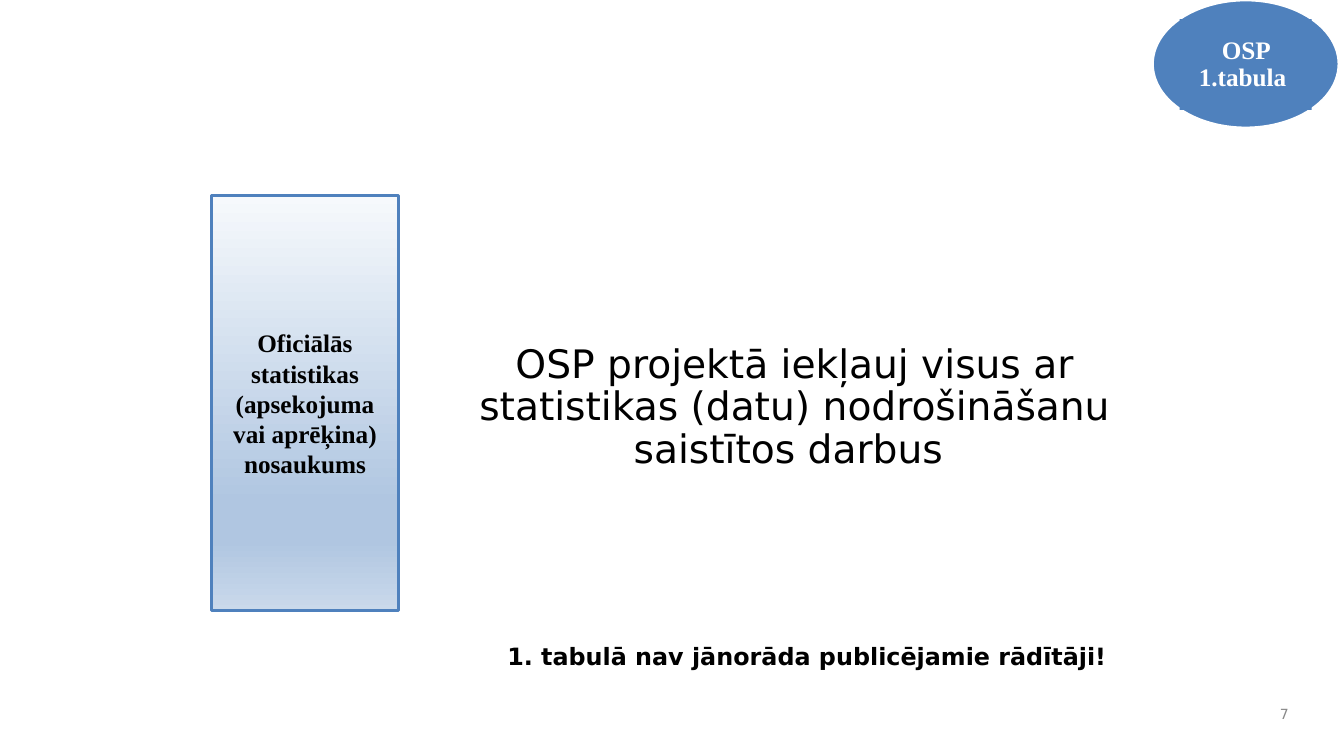
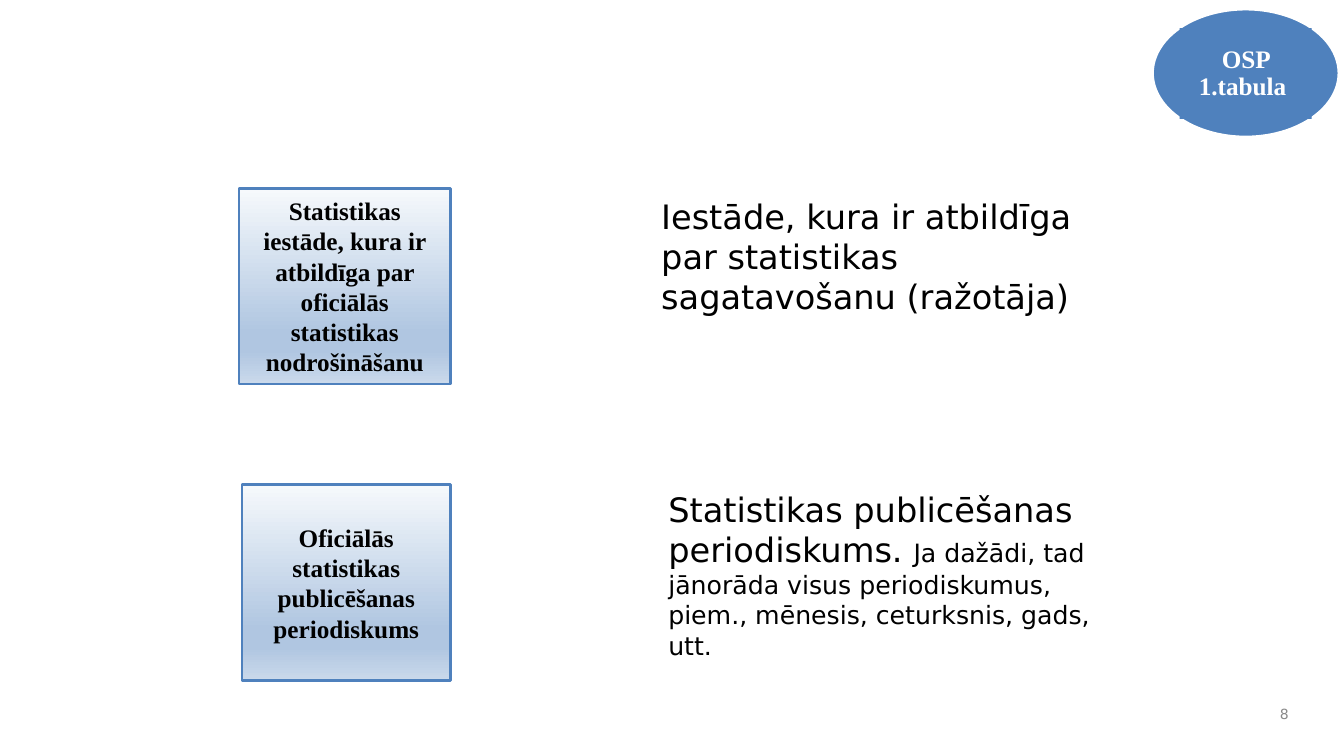
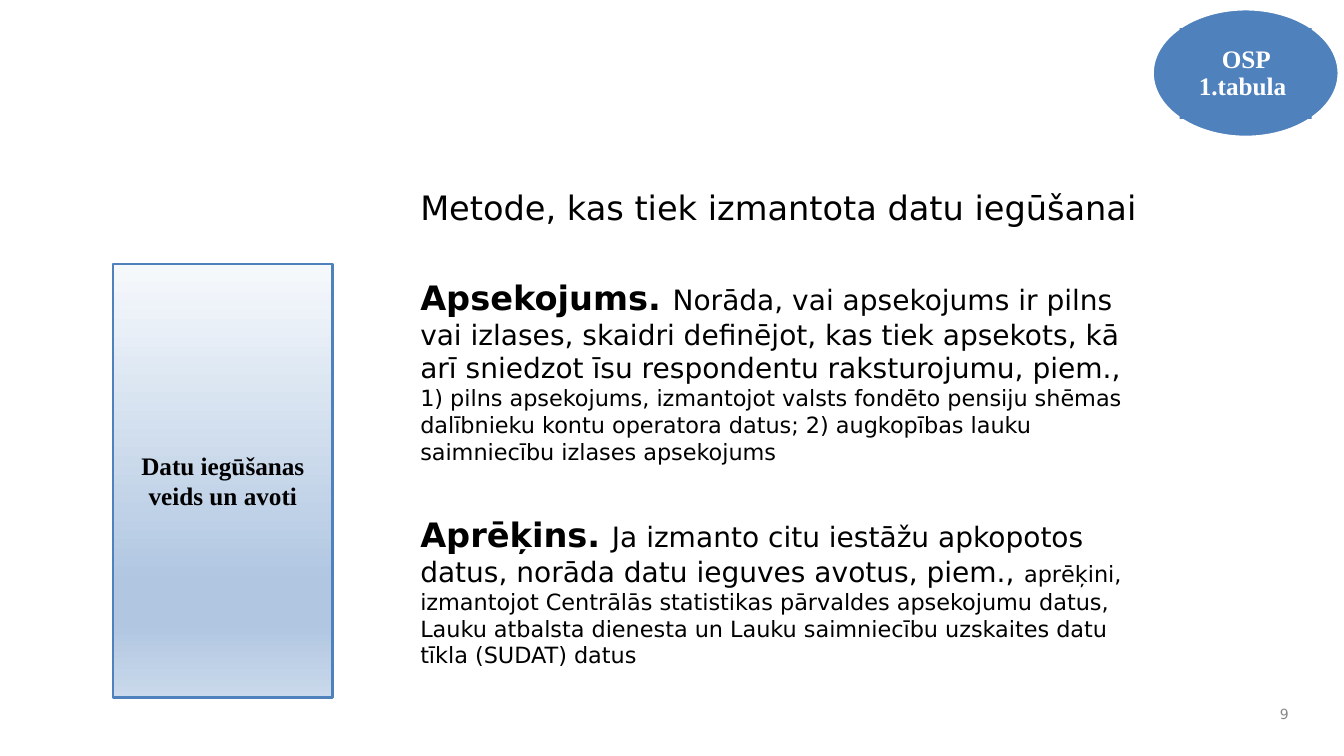
from dataclasses import dataclass

from lxml.etree import SubElement
from pptx import Presentation
from pptx.dml.color import RGBColor
from pptx.enum.shapes import MSO_SHAPE as Shape
from pptx.enum.text import MSO_ANCHOR as Anchor, PP_ALIGN as Align
from pptx.oxml.ns import qn
from pptx.util import Inches, Pt

# Shared look
BODY_FONT, LABEL_FONT = "DejaVu Sans", "Times New Roman"
BLACK, WHITE, GREY, BLUE = "000000", "FFFFFF", "898989", "4F81BD"
PANEL_STOPS = [(0, "F6F9FC"), (74, "B0C6E1"), (83, "B0C6E1"), (100, "CAD9EB")]
BADGE_TEXT = "OSP 1.tabula "


@dataclass
class Area:
    left: float
    top: float
    width: float
    height: float

    def lengths(self):
        return [Inches(n) for n in (self.left, self.top, self.width, self.height)]


@dataclass
class Span:
    text: str
    size: float
    bold: bool = False


@dataclass
class Para:
    spans: list[Span]
    space_before: float = 0


@dataclass
class Panel:
    area: Area
    label: str


@dataclass
class Note:
    area: Area
    paras: list[Para]
    align: Align = Align.LEFT
    line_spacing: float = 1.0


@dataclass
class Page:
    number: int
    badge_top: float
    panels: list[Panel]
    notes: list[Note]


PAGES = [
    Page(7, 0, [
        Panel(Area(2.1, 1.94, 1.85, 4.12),
              "Oficiālās statistikas (apsekojuma vai aprēķina) nosaukums"),
    ], [
        Note(Area(4.06, 3.37, 7.64, 2.82), [Para([
            Span("OSP projektā iekļauj visus ar statistikas (datu) "
                 "nodrošināšanu saistītos darbus ", 28)])], Align.CENTER, 0.9),
        Note(Area(4.67, 6.35, 6.67, 0.36), [Para([
            Span("1. tabulā nav jānorāda publicējamie rādītāji!", 17, True)])],
            Align.CENTER, 0.9),
    ]),
    Page(8, 0.09, [
        Panel(Area(2.37, 1.87, 2.1, 1.94),
              "Statistikas iestāde, kura ir atbildīga par oficiālās "
              "statistikas nodrošināšanu"),
        Panel(Area(2.4, 4.81, 2.07, 1.94),
              "Oficiālās statistikas publicēšanas periodiskums"),
    ], [
        Note(Area(6.46, 1.89, 4.36, 1.91), [Para([
            Span("Iestāde, kura ir atbildīga par statistikas "
                 "sagatavošanu (ražotāja)", 24)])]),
        Note(Area(6.53, 4.8, 4.6, 1.91), [Para([
            Span("Statistikas publicēšanas periodiskums. ", 24),
            Span("Ja dažādi, tad jānorāda visus periodiskumus, piem., "
                 "mēnesis, ceturksnis, gads, utt.", 18)])]),
    ]),
    Page(9, 0.09, [
        Panel(Area(1.12, 2.62, 2.18, 4.3), "Datu iegūšanas veids un avoti"),
    ], [
        Note(Area(4.07, 1.81, 7.46, 5.13), [
            Para([Span("Metode, kas tiek izmantota datu iegūšanai", 24)]),
            Para([
                Span("Apsekojums. ", 24, True),
                Span("Norāda, vai apsekojums ir pilns vai izlases, skaidri "
                     "definējot, kas tiek apsekots, kā arī sniedzot īsu "
                     "respondentu raksturojumu, piem., ", 20),
                Span("1) pilns apsekojums, izmantojot valsts fondēto pensiju "
                     "shēmas dalībnieku kontu operatora datus; 2) augkopības "
                     "lauku saimniecību izlases apsekojums", 16)], 35),
            Para([
                Span("Aprēķins. ", 24, True),
                Span("Ja izmanto citu iestāžu apkopotos datus, norāda datu "
                     "ieguves avotus, piem., ", 20),
                Span("aprēķini, izmantojot Centrālās statistikas pārvaldes "
                     "apsekojumu datus, Lauku atbalsta dienesta un Lauku "
                     "saimniecību uzskaites datu tīkla (SUDAT) datus", 16)], 35),
        ]),
    ]),
]


def color(value: str) -> RGBColor:
    return RGBColor.from_string(value)


def style(para, size: float, font: str, value: str, bold: bool, align: Align) -> None:
    para.alignment = align
    para.font.size, para.font.name, para.font.bold = Pt(size), font, bold
    para.font.color.rgb = color(value)


def add_block(shapes, kind: Shape, area: Area, line: str | None = None):
    block = shapes.add_shape(kind, *area.lengths())
    block.shadow.inherit = False
    block.fill.solid()
    block.fill.fore_color.rgb = color(BLUE)
    if line:
        block.line.color.rgb = color(line)
        block.line.width = Pt(2)
    else:
        block.line.fill.background()
    return block


def add_label(block, text: str, value: str):
    """Centre a bold label in a block and return its paragraph."""
    frame = block.text_frame
    frame.word_wrap = True
    frame.vertical_anchor = Anchor.MIDDLE
    para = frame.paragraphs[0]
    para.text = text
    style(para, 18, LABEL_FONT, value, True, Align.CENTER)
    return para


def add_panel(slide, panel: Panel) -> None:
    block = add_block(slide.shapes, Shape.RECTANGLE, panel.area, BLUE)
    block.fill.gradient()
    block.fill.gradient_angle = 270
    # Four stops replace the two default ones
    stops = next(block._element.iter(qn("a:gsLst")))
    for stop in list(stops):
        stops.remove(stop)
    for percent, value in PANEL_STOPS:
        stop = SubElement(stops, qn("a:gs"), pos=str(percent * 1000))
        SubElement(stop, qn("a:srgbClr"), val=value)
    add_label(block, panel.label, BLACK)


def add_badge(slide, top: float) -> None:
    group = slide.shapes.add_group_shape()
    add_block(group.shapes, Shape.OVAL, Area(11.43, top, 1.85, 1.27), WHITE)
    block = add_block(group.shapes, Shape.RECTANGLE, Area(11.7, top + 0.19, 1.31, 0.9))
    frame = block.text_frame
    frame.margin_left = frame.margin_right = Inches(0.01)
    frame.margin_top = frame.margin_bottom = Inches(0.01)
    add_label(block, BADGE_TEXT, WHITE).line_spacing = 0.9


def add_note(slide, note: Note) -> None:
    frame = slide.shapes.add_textbox(*note.area.lengths()).text_frame
    frame.word_wrap = True
    for index, item in enumerate(note.paras):
        para = frame.add_paragraph() if index else frame.paragraphs[0]
        style(para, item.spans[0].size, BODY_FONT, BLACK, item.spans[0].bold, note.align)
        para.line_spacing = note.line_spacing
        if item.space_before:
            para.space_before = Pt(item.space_before)
        for span in item.spans:
            run = para.add_run()
            run.text = span.text
            run.font.size, run.font.bold = Pt(span.size), span.bold


def add_page_number(slide, number: int) -> None:
    frame = slide.shapes.add_textbox(*Area(12.44, 6.92, 0.44, 0.33).lengths()).text_frame
    frame.word_wrap = True
    frame.vertical_anchor = Anchor.MIDDLE
    para = frame.paragraphs[0]
    para.text = str(number)
    style(para, 10, BODY_FONT, GREY, False, Align.RIGHT)


def main() -> None:
    deck = Presentation()
    deck.slide_width, deck.slide_height = Inches(13.33), Inches(7.5)
    for page in PAGES:
        slide = deck.slides.add_slide(deck.slide_layouts[6])
        for panel in page.panels:
            add_panel(slide, panel)
        for note in page.notes:
            add_note(slide, note)
        add_badge(slide, page.badge_top)
        add_page_number(slide, page.number)
    deck.save("out.pptx")


if __name__ == "__main__":
    main()
